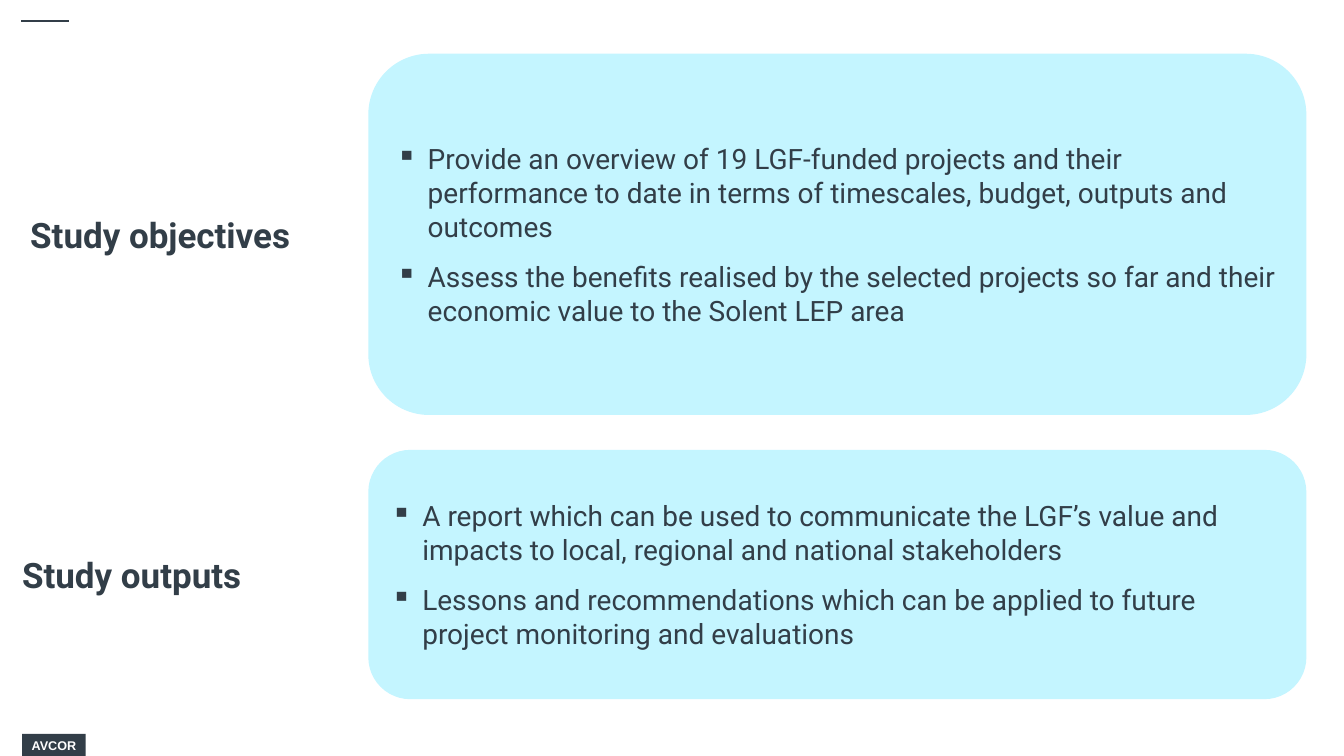
from dataclasses import dataclass

from lxml import etree
from pptx import Presentation
from pptx.dml.color import RGBColor
from pptx.enum import shapes, text
from pptx.oxml import ns
from pptx.util import Inches, Pt


@dataclass(frozen=True)
class Theme:
    ink: RGBColor = RGBColor(0x32, 0x3E, 0x48)
    panel: RGBColor = RGBColor(0xC4, 0xF5, 0xFF)
    paper: RGBColor = RGBColor(0xFF, 0xFF, 0xFF)
    font: str = "Roboto"
    tag_font: str = "Arial"
    heading_size: int = 25
    body_size: int = 20
    tag_size: int = 9


class StudySlide:
    def __init__(self, deck, theme):
        self.theme = theme
        self.slide = deck.slides.add_slide(deck.slide_layouts[5])
        self.shapes = self.slide.shapes

    def style(self, paragraph, size, color, bold=False, name=None):
        font = paragraph.font
        font.name = name or self.theme.font
        font.size, font.bold = Pt(size), bold
        font.color.rgb = color

    def block(self, kind, box, fill, line=None):
        shape = self.shapes.add_shape(kind, *map(Inches, box))
        shape.shadow.inherit = False
        shape.fill.solid()
        shape.fill.fore_color.rgb = fill
        if line is None:
            shape.line.fill.background()
        else:
            shape.line.color.rgb = line
            shape.line.width = Pt(1)
        return shape

    def rule(self, x1, x2, y):
        rule = self.shapes.add_connector(
            shapes.MSO_CONNECTOR.STRAIGHT, Inches(x1), Inches(y), Inches(x2), Inches(y))
        rule.line.color.rgb = self.theme.ink
        rule.line.width = Pt(1)
        etree.SubElement(rule._element.spPr, ns.qn("a:effectLst"))

    def tag(self, words, box):
        frame = self.block(shapes.MSO_SHAPE.RECTANGLE, box, self.theme.ink).text_frame
        frame.margin_left = frame.margin_right = Inches(0.08)
        frame.margin_top = frame.margin_bottom = Inches(0.04)
        frame.word_wrap = False
        frame.text = words
        label = frame.paragraphs[0]
        label.alignment = text.PP_ALIGN.CENTER
        self.style(label, self.theme.tag_size, self.theme.paper, True, self.theme.tag_font)

    def heading(self, words, box, is_title=False):
        lengths = [Inches(n) for n in box]
        if is_title:
            holder = self.shapes.title
            holder.left, holder.top, holder.width, holder.height = lengths
        else:
            holder = self.shapes.add_textbox(*lengths)
        frame = holder.text_frame
        frame.margin_left = frame.margin_right = frame.margin_top = frame.margin_bottom = 0
        frame.word_wrap = True
        frame.auto_size = text.MSO_AUTO_SIZE.NONE
        frame.vertical_anchor = text.MSO_ANCHOR.MIDDLE
        frame.text = words
        line = frame.paragraphs[0]
        line.alignment = text.PP_ALIGN.LEFT
        self.style(line, self.theme.heading_size, self.theme.ink, True)

    def bullet_panel(self, points, box):
        color = self.theme.panel
        panel = self.block(shapes.MSO_SHAPE.ROUNDED_RECTANGLE, box, color, color)
        frame = panel.text_frame
        frame.word_wrap = True
        frame.vertical_anchor = text.MSO_ANCHOR.MIDDLE
        for index, words in enumerate(points):
            point = frame.paragraphs[0] if index == 0 else frame.add_paragraph()
            point.text = words
            point.alignment = text.PP_ALIGN.LEFT
            if index:
                point.space_before = Pt(12)
            props = point._p.get_or_add_pPr()
            props.set("marL", str(Inches(0.31)))
            props.set("indent", str(-Inches(0.31)))
            etree.SubElement(props, ns.qn("a:buChar"), char="▪")
            self.style(point, self.theme.body_size, self.theme.ink)


def main():
    deck = Presentation()
    deck.slide_width, deck.slide_height = Inches(13.33), Inches(7.5)
    study = StudySlide(deck, Theme())

    # Page furniture
    study.tag("AVCOR", (0.22, 7.28, 0.63, 0.23))
    study.rule(0.21, 0.68, 0.21)

    # Headings
    study.heading("Study objectives", (0.3, 1.89, 3.03, 0.87), is_title=True)
    study.heading("Study outputs", (0.22, 5.26, 3.2, 0.87))

    # Panels
    panel_left, panel_width = 3.66, 9.29
    objectives = [
        "Provide an overview of 19 LGF-funded projects and their performance to date "
        "in terms of timescales, budget, outputs and outcomes",
        "Assess the benefits realised by the selected projects so far and their "
        "economic value to the Solent LEP area",
    ]
    outputs = [
        "A report which can be used to communicate the LGF’s value and impacts to "
        "local, regional and national stakeholders",
        "Lessons and recommendations which can be applied to future project "
        "monitoring and evaluations",
    ]
    for points, top, height in ((objectives, 0.54, 3.57), (outputs, 4.47, 2.46)):
        study.bullet_panel(points, (panel_left, top, panel_width, height))

    deck.save("out.pptx")


if __name__ == "__main__":
    main()
